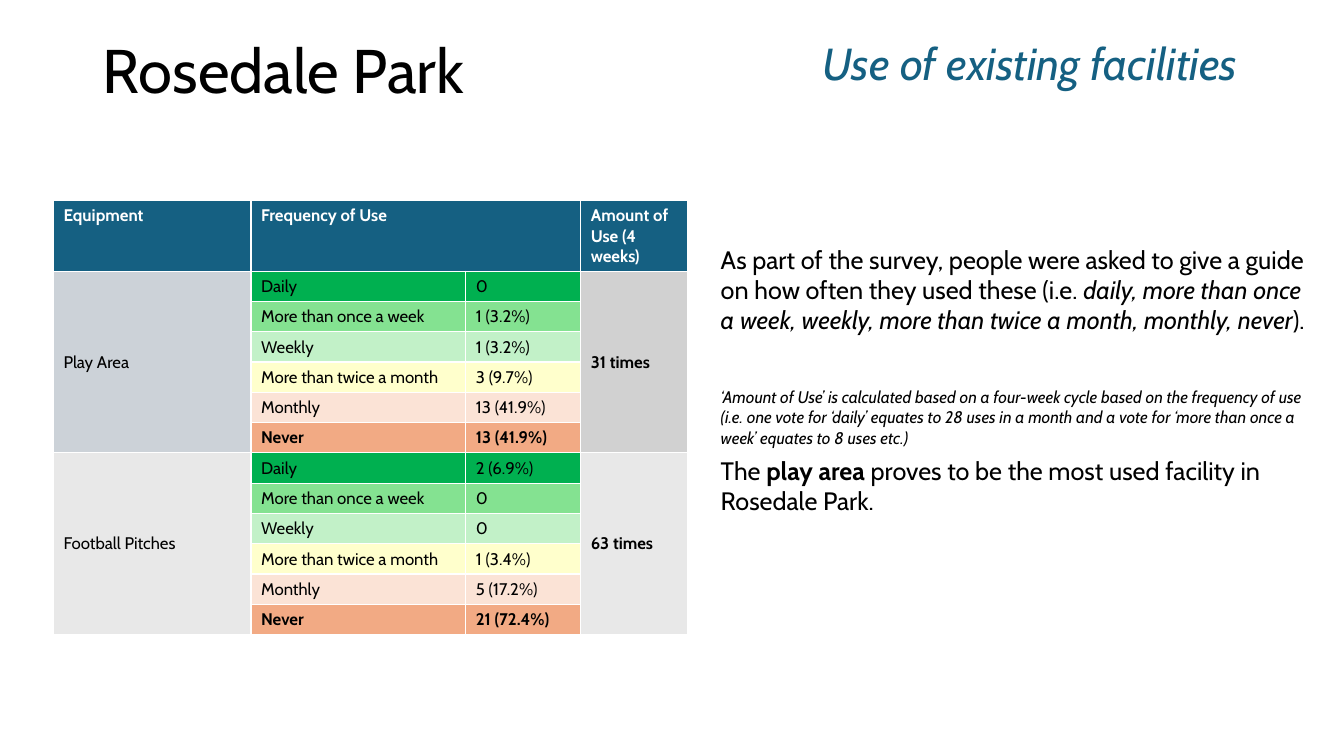
from pptx import Presentation
from pptx.dml.color import RGBColor
from pptx.enum.text import MSO_ANCHOR
from pptx.util import Inches, Pt


def style_runs(p, size, color="000000", bold=False, italic=False):
    for r in p.runs:
        r.font.name = "Cabin"
        r.font.size = Pt(size)
        r.font.color.rgb = RGBColor.from_string(color)
        r.font.bold = bold
        r.font.italic = italic


def add_text(left, top, width, height, text, size, color="000000", italic=False):
    sp = s.shapes.add_textbox(Inches(left), Inches(top), Inches(width), Inches(height))
    tf = sp.text_frame
    tf.word_wrap = True
    tf.text = text
    style_runs(tf.paragraphs[0], size, color, italic=italic)
    return tf


prs = Presentation()
prs.slide_width, prs.slide_height = Inches(13.33), Inches(7.5)
s = prs.slides.add_slide(prs.slide_layouts[6])

# Headings
tf = add_text(0.92, 0, 11.5, 1.45, "Rosedale Park", 44)
tf.vertical_anchor = MSO_ANCHOR.MIDDLE
tf.paragraphs[0].line_spacing = 0.9
add_text(8.06, 0.31, 5.48, 0.64, "Use of existing facilities", 32, "156082", italic=True)

# Table of use: one block of rows for each facility
frequencies = [
    ("Daily", "00B050"),
    ("More than once a week", "84E291"),
    ("Weekly", "C2F1C8"),
    ("More than twice a month", "FFFFCC"),
    ("Monthly", "FBE3D6"),
    ("Never", "F2AA84"),
]
facilities = [
    ("Play Area", "CCD2D8", "31 times", "D1D1D1",
     ["0", "1 (3.2%)", "1 (3.2%)", "3 (9.7%)", "13 (41.9%)", "13 (41.9%)"]),
    ("Football Pitches", "E8E8E8", "63 times", "E8E8E8",
     ["2 (6.9%)", "0", "0", "1 (3.4%)", "5 (17.2%)", "21 (72.4%)"]),
]
block = len(frequencies)
row_count = 1 + block * len(facilities)
header_height, row_height = 0.69, 0.3

table = s.shapes.add_table(
    row_count, 4, Inches(0.53), Inches(1.99), Inches(6.29),
    Inches(header_height + row_height * (row_count - 1))).table
for column, width in zip(table.columns, [1.96, 2.13, 1.14, 1.06]):
    column.width = Inches(width)
for i, row in enumerate(table.rows):
    row.height = Inches(row_height if i else header_height)

# Each entry: row, column, text, fill, text colour, bold
entries = [(0, col, text, "156082", "FFFFFF", True) for col, text in
           enumerate(["Equipment", "Frequency of Use", "", "Amount of Use (4 weeks)"])]
table.cell(0, 1).merge(table.cell(0, 2))
for n, (facility, name_fill, total, total_fill, votes) in enumerate(facilities):
    top = 1 + n * block
    for col in (0, 3):
        table.cell(top, col).merge(table.cell(top + block - 1, col))
        table.cell(top, col).vertical_anchor = MSO_ANCHOR.MIDDLE
    entries.append((top, 0, facility, name_fill, "000000", False))
    entries.append((top, 3, total, total_fill, "000000", True))
    for i, ((frequency, fill), vote) in enumerate(zip(frequencies, votes)):
        bold = frequency == "Never"
        entries.append((top + i, 1, frequency, fill, "000000", bold))
        entries.append((top + i, 2, vote, fill, "000000", bold))

for row, col, text, fill, color, bold in entries:
    cell = table.cell(row, col)
    cell.fill.solid()
    cell.fill.fore_color.rgb = RGBColor.from_string(fill)
    if text:
        cell.text = text
        style_runs(cell.text_frame.paragraphs[0], 12, color, bold)

# Commentary, with room between its paragraphs for the note
tf = add_text(7.05, 2.37, 6.12, 3.13, "", 18)
intro, finding = tf.paragraphs[0], tf.add_paragraph()
finding.space_before = Inches(1.2)
for p, parts in [
    (intro, ["As part of the survey, people were asked to give a guide on how often they used these (i.e. ",
             "daily, more than once a week, weekly, more than twice a month, monthly, never", ")."]),
    (finding, ["The ", "play area ", "proves to be the most used facility in Rosedale Park."]),
]:
    for part in parts:
        p.add_run().text = part
    style_runs(p, 18)
intro.runs[1].font.italic = True
finding.runs[1].font.bold = True

add_text(7.05, 3.79, 6.12, 0.71,
         "‘Amount of Use’ is calculated based on a four-week cycle based on the frequency of use "
         "(i.e. one vote for ‘daily’ equates to 28 uses in a month and a vote for "
         "‘more than once a week’ equates to 8 uses etc.)", 12, italic=True)

prs.save("out.pptx")
